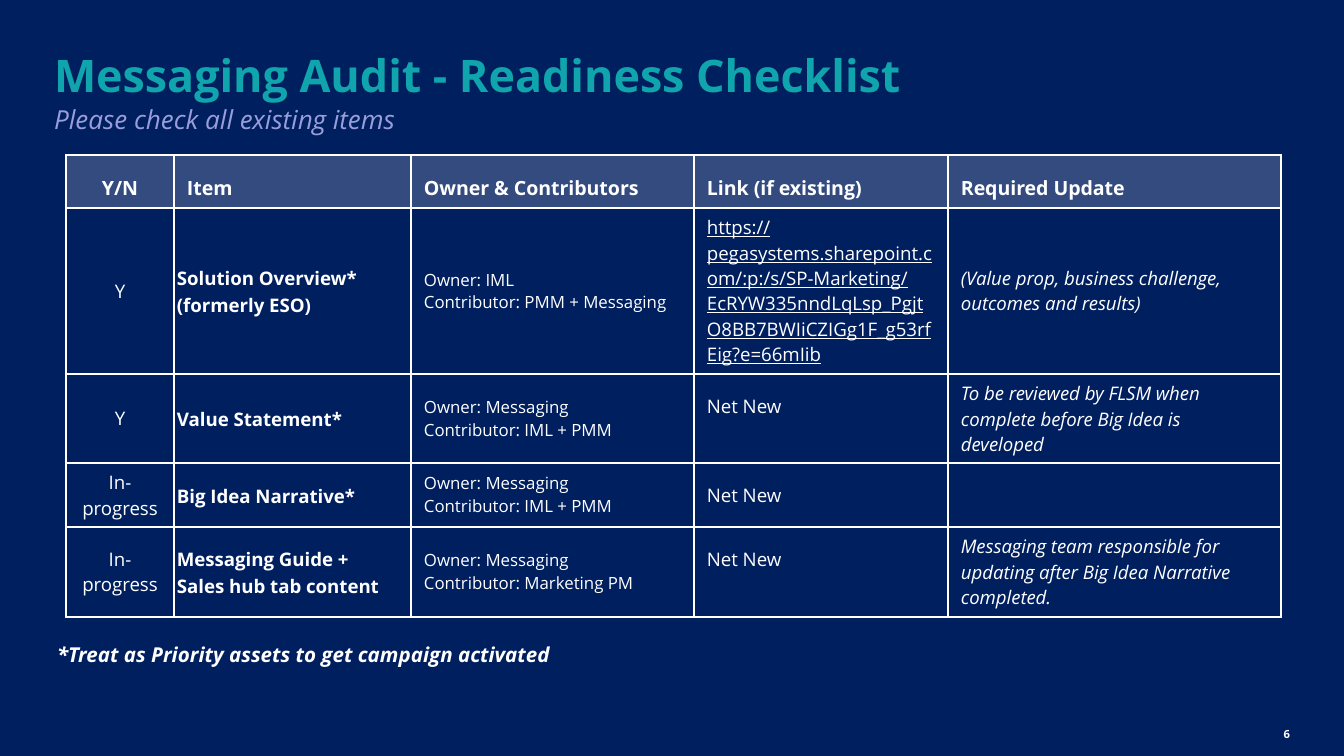
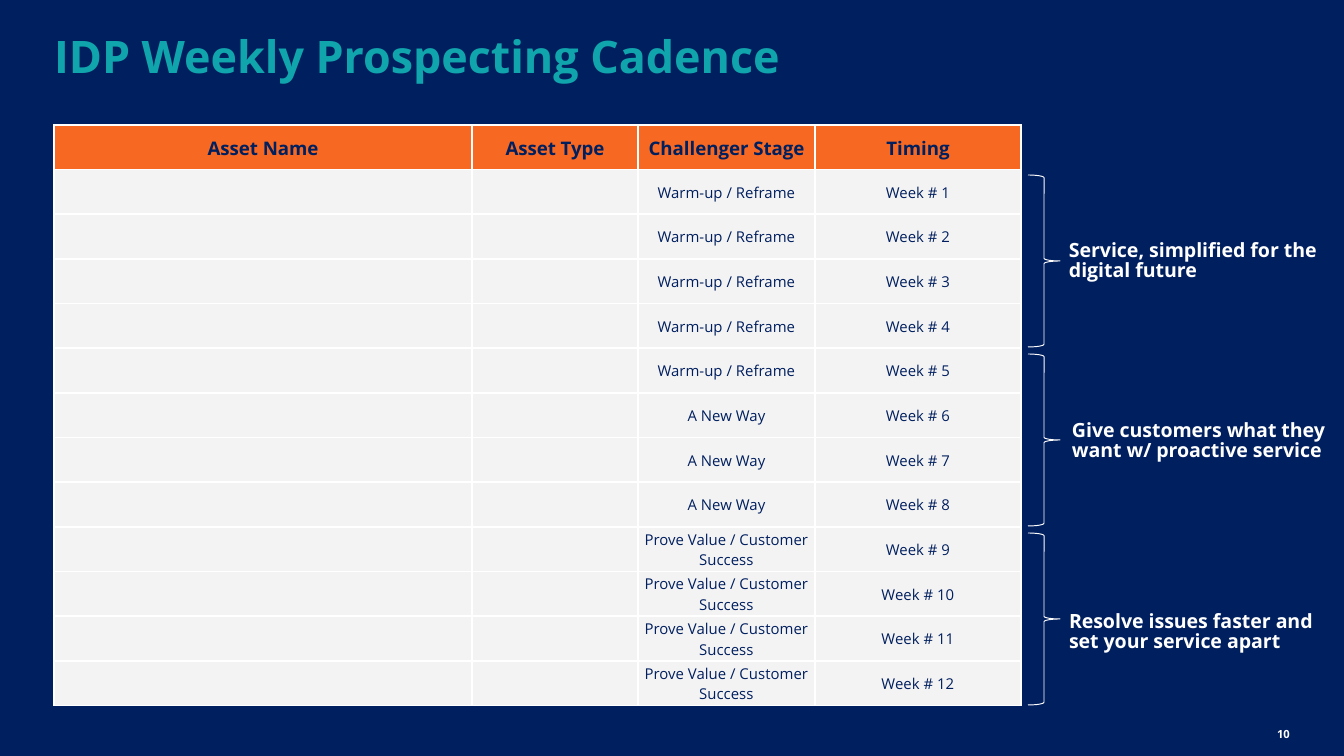
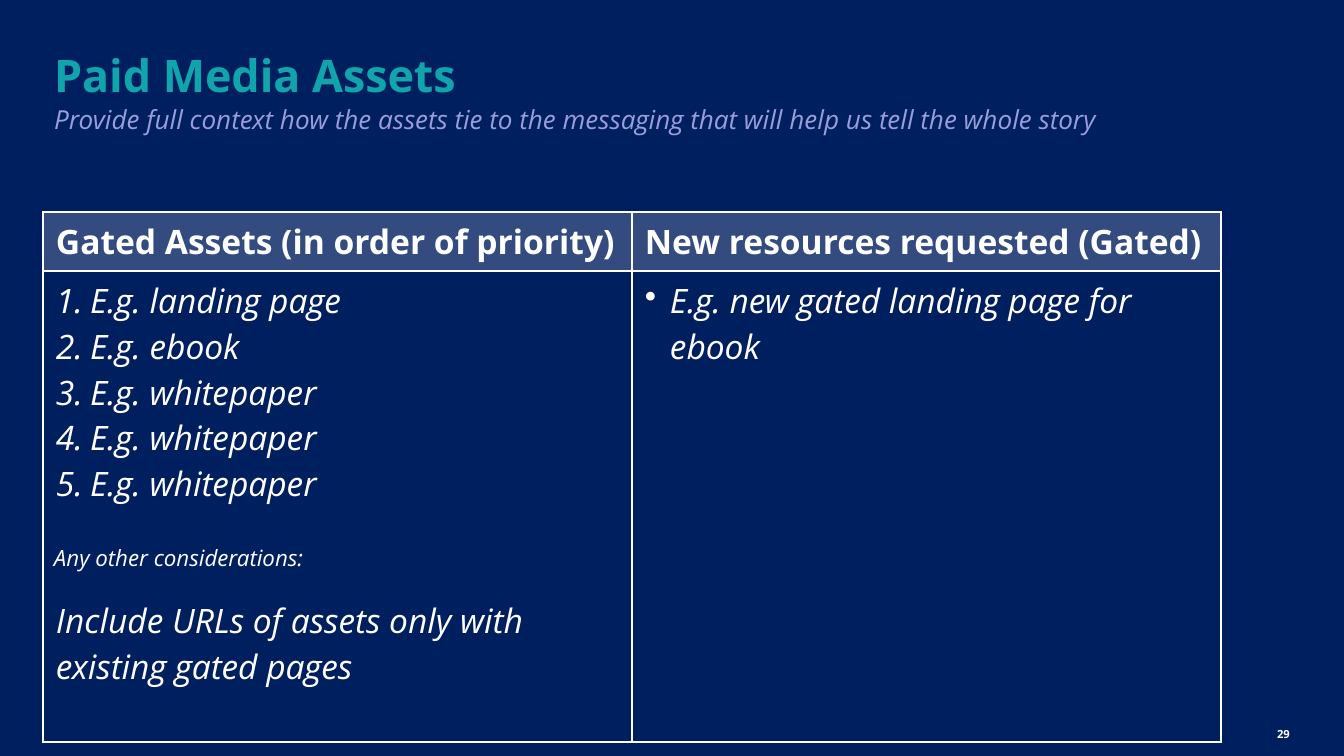
from lxml.etree import SubElement
from pptx import Presentation
from pptx.dml.color import RGBColor
from pptx.enum.shapes import MSO_SHAPE
from pptx.enum.text import MSO_ANCHOR, PP_ALIGN
from pptx.oxml.ns import qn
from pptx.util import Emu, Pt

# ---- Content: one line of text per paragraph ----
CHECKLIST = {
    "title": "Messaging Audit - Readiness Checklist",
    "subtitle": "Please check all existing items",
    "number": 6,
    "header": ["Y/N", "Item", "Owner & Contributors", "Link (if existing)", "Required Update"],
    "rows": [
        ["Y", "Solution Overview*\n(formerly ESO)", "Owner: IML\nContributor: PMM + Messaging",
         "https://pegasystems.sharepoint.com/:p:/s/SP-Marketing/"
         "EcRYW335nndLqLsp_PgjtO8BB7BWIiCZIGg1F_g53rfEig?e=66mIib",
         "(Value prop, business challenge, outcomes and results)"],
        ["Y", "Value Statement*", "Owner: Messaging\nContributor: IML + PMM", "Net New",
         "To be reviewed by FLSM when complete before Big Idea is developed"],
        ["In-progress", "Big Idea Narrative*", "Owner: Messaging\nContributor: IML + PMM",
         "Net New", ""],
        ["In-progress", "Messaging Guide +\nSales hub tab content",
         "Owner: Messaging\nContributor: Marketing PM", "Net New",
         "Messaging team responsible for updating after Big Idea Narrative completed."],
    ],
    "note": "*Treat as Priority assets to get campaign activated",
}
CADENCE = {
    "title": "IDP Weekly Prospecting Cadence",
    "number": 10,
    "header": ["Asset Name", "Asset Type", "Challenger Stage", "Timing"],
    "stages": [("Warm-up / Reframe", 5), ("A New Way", 3), ("Prove Value / Customer Success", 4)],
    "themes": [
        ("Service, simplified for the\ndigital future", (1056, 234, 280, 60)),
        ("Give customers what they\nwant w/ proactive service", (1059, 414, 285, 60)),
        ("Resolve issues faster and\nset your service apart", (1056, 605, 275, 60)),
    ],
}
MEDIA = {
    "title": "Paid Media Assets",
    "subtitle": "Provide full context how the assets tie to the messaging "
                "that will help us tell the whole story",
    "number": 29,
    "header": ["Gated Assets (in order of priority)", "New resources requested (Gated)"],
    "assets": ["E.g. landing page", "E.g. ebook"] + ["E.g. whitepaper"] * 3,
    "advice": "Include URLs of assets only with existing gated pages",
    "request": "E.g. new gated landing page for ebook",
    "note": "Any other considerations:",
}

# ---- Theme ----
THEME = {
    "font": "Open Sans",
    "navy": "001F5F", "teal": "10A5AC", "lilac": "999EDB",
    "white": "FFFFFF", "orange": "F76923", "grey": "F4F3F3",
    "styles": {
        "title": {"size": 24, "bold": True, "color": "teal"},
        "subtitle": {"size": 14, "italic": True, "color": "lilac"},
        "number": {"size": 6, "bold": True},
        "head": {"size": 10.5, "bold": True},
        "body": {"size": 10},
        "item": {"size": 10, "bold": True},
        "owner": {"size": 9},
        "link": {"size": 10, "underline": True},
        "update": {"size": 10, "italic": True},
        "priority": {"size": 11, "bold": True, "italic": True},
        "week_head": {"size": 10, "bold": True, "color": "navy"},
        "week": {"size": 8, "color": "navy"},
        "media_head": {"size": 18, "bold": True},
        "media": {"size": 18, "italic": True},
        "remark": {"size": 12, "italic": True},
    },
}
SCALE = 914400 / 134.4
MARGINS = (13, 7, 13, 7)
CENTER, RIGHT = PP_ALIGN.CENTER, PP_ALIGN.RIGHT
TOP, MIDDLE, BOTTOM = MSO_ANCHOR.TOP, MSO_ANCHOR.MIDDLE, MSO_ANCHOR.BOTTOM


def px(n):
    return Emu(round(n * SCALE))


def rgb(name):
    return RGBColor.from_string(THEME[name])


# ---- Text ----
def write(tf, text, style, **formats):
    """Fill a text frame, one paragraph per line; formats are paragraph attributes."""
    fmt = dict(THEME["styles"][style])
    color, size = fmt.pop("color", "white"), fmt.pop("size")
    for i, line in enumerate(text.split("\n")):
        p = tf.paragraphs[0] if i == 0 else tf.add_paragraph()
        for key, value in formats.items():
            setattr(p, key, value)
        if not line:
            SubElement(p._p, qn("a:endParaRPr"), sz=str(size * 100))
            continue
        r = p.add_run()
        r.text = line
        r.font.name, r.font.size = THEME["font"], Pt(size)
        r.font.color.rgb = rgb(color)
        for key, value in fmt.items():
            setattr(r.font, key, value)


def set_margins(target, margins):
    for side, value in zip(("left", "top", "right", "bottom"), margins):
        setattr(target, f"margin_{side}", px(value))


def add_text(slide, box, text, style, margins=(0, 0, 0, 0), wrap=True, anchor=TOP, **formats):
    tf = slide.shapes.add_textbox(*map(px, box)).text_frame
    tf.word_wrap, tf.vertical_anchor = wrap, anchor
    set_margins(tf, margins)
    write(tf, text, style, **formats)


def add_bullet(p, indent, tag, **attributes):
    pPr = p._p.get_or_add_pPr()
    pPr.set("marL", str(px(indent)))
    pPr.set("indent", str(-px(indent)))
    SubElement(pPr, qn(tag), **attributes)


# ---- Tables ----
def add_table(slide, left, top, widths, heights):
    frame = slide.shapes.add_table(len(heights), len(widths), px(left), px(top),
                                   px(sum(widths)), px(sum(heights)))
    table = frame.table
    table.first_row = table.horz_banding = False
    for column, width in zip(table.columns, widths):
        column.width = px(width)
    for row, height in zip(table.rows, heights):
        row.height = px(height)
    return table


def fill_cell(cell, text, style, fill="navy", alpha=None, margins=MARGINS, anchor=MIDDLE, **formats):
    cell.fill.solid()
    cell.fill.fore_color.rgb = rgb(fill)
    tcPr = cell._tc.get_or_add_tcPr()
    if alpha:
        SubElement(tcPr.find(".//" + qn("a:srgbClr")), qn("a:alpha"), val=str(alpha * 1000))
    for i, side in enumerate("LRTB"):
        ln = SubElement(tcPr, qn(f"a:ln{side}"), w=str(Pt(1)))
        SubElement(SubElement(ln, qn("a:solidFill")), qn("a:srgbClr"), val=THEME["white"])
        tcPr.insert(i, ln)
    cell.vertical_anchor = anchor
    set_margins(cell, margins)
    write(cell.text_frame, text, style, **formats)


# ---- Shared slide parts ----
def new_slide(prs, content, title_top=54):
    slide = prs.slides.add_slide(prs.slide_layouts[6])
    slide.background.fill.solid()
    slide.background.fill.fore_color.rgb = rgb("navy")
    add_text(slide, (54, title_top, 1236, 50), content["title"], "title", line_spacing=0.9)
    if "subtitle" in content:
        add_text(slide, (54, 103, 1236, 40), content["subtitle"], "subtitle")
    add_text(slide, (1243, 714, 47, 27), str(content["number"]), "number",
             wrap=False, anchor=BOTTOM, alignment=RIGHT)
    return slide


# ---- Slides ----
def build_checklist(prs):
    slide = new_slide(prs, CHECKLIST)
    table = add_table(slide, 66, 155, [108, 237, 283, 254, 333], [53, 166, 89, 64, 90])
    for c, text in enumerate(CHECKLIST["header"]):
        fill_cell(table.cell(0, c), text, "head", "white", 20, anchor=BOTTOM,
                  alignment=None if c else CENTER)
    columns = [
        ("body", {"alignment": CENTER}),
        ("item", {"margins": (3, 3, 3, 3), "line_spacing": 1.07}),
        ("owner", {}),
        ("body", {}),
        ("update", {}),
    ]
    for r, row in enumerate(CHECKLIST["rows"], 1):
        for c, (text, (style, formats)) in enumerate(zip(row, columns)):
            style = "link" if text.startswith("https") else style
            fill_cell(table.cell(r, c), text, style, **formats)
    # These two entries sit half a line above the middle
    for r in (2, 4):
        table.cell(r, 3).margin_bottom = px(32)
    add_text(slide, (44, 633, 524, 39), CHECKLIST["note"], "priority", MARGINS,
             wrap=False, line_spacing=1.07)


def build_cadence(prs):
    slide = new_slide(prs, CADENCE, title_top=35)
    stages = [name for name, weeks in CADENCE["stages"] for _ in range(weeks)]
    rows = [CADENCE["header"]]
    rows += [["", "", stage, f"Week # {week}"] for week, stage in enumerate(stages, 1)]
    table = add_table(slide, 54, 125, [418, 166, 177, 206], [581 / len(rows)] * len(rows))
    for r, row in enumerate(rows):
        style, fill = ("week", "grey") if r else ("week_head", "orange")
        for c, text in enumerate(row):
            fill_cell(table.cell(r, c), text, style, fill, margins=(1, 1, 1, 0), alignment=CENTER)
    # Braces group the weeks by theme
    for i, (text, box) in enumerate(CADENCE["themes"]):
        sp = slide.shapes.add_shape(MSO_SHAPE.RIGHT_BRACE,
                                    *map(px, (1028, 175 + 179 * i, 32, 172)))
        sp.shadow.inherit = False
        sp.fill.background()
        sp.line.color.rgb, sp.line.width = rgb("white"), Pt(0.5)
        add_text(slide, box, text, "head", MARGINS, wrap=False, line_spacing=0.87)


def build_media(prs):
    slide = new_slide(prs, MEDIA)
    table = add_table(slide, 43, 212, [589, 589], [59, 471])
    for c, text in enumerate(MEDIA["header"]):
        fill_cell(table.cell(0, c), text, "media_head", "white", 20, anchor=BOTTOM)
    assets, request = table.cell(1, 0), table.cell(1, 1)
    fill_cell(assets, "\n".join(MEDIA["assets"] + [MEDIA["advice"]]), "media", anchor=TOP)
    *numbered, advice = assets.text_frame.paragraphs
    for p in numbered:
        add_bullet(p, 34, "a:buAutoNum", type="arabicPeriod")
    advice.space_before = Pt(49)
    fill_cell(request, MEDIA["request"], "media", anchor=TOP)
    add_bullet(request.text_frame.paragraphs[0], 25, "a:buChar", char="•")
    add_text(slide, (54, 544, 1179, 74), MEDIA["note"], "remark")


def main():
    prs = Presentation()
    prs.slide_width, prs.slide_height = px(1344), px(756)
    for build in (build_checklist, build_cadence, build_media):
        build(prs)
    prs.save("out.pptx")


if __name__ == "__main__":
    main()
